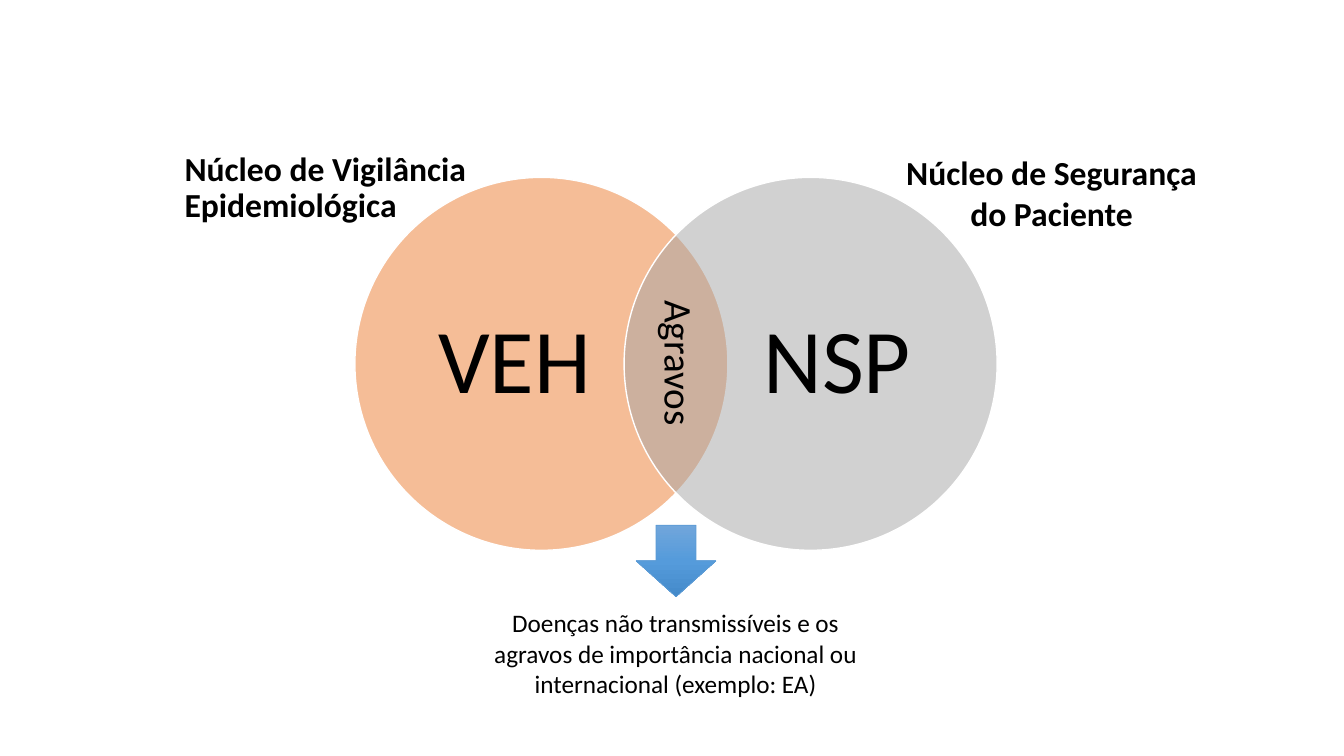
from copy import deepcopy
from dataclasses import dataclass

from pptx import Presentation
from pptx import util as u
from pptx.dml.color import RGBColor
from pptx.enum import shapes, text
from pptx.oxml.ns import qn
from lxml import etree

BLACK, WHITE = "000000", "FFFFFF"
DIAMETER, CIRCLE_TOP = 3.7, 1.76


@dataclass
class Circle:
    label: str
    left: float
    label_left: float
    color: str


@dataclass
class Label:
    words: str
    box: tuple[float, float, float, float]
    size: int
    bold: bool = False
    align: text.PP_ALIGN = text.PP_ALIGN.CENTER
    anchor: text.MSO_ANCHOR = text.MSO_ANCHOR.TOP
    spacing: float = 1.0
    rotation: int = 0
    flush: bool = False


TITLE = Label("Núcleo de Vigilância Epidemiológica", (1.73, 1.46, 3.24, 0.69), 24,
              bold=True, align=text.PP_ALIGN.LEFT, spacing=0.9)
CIRCLES = [
    Circle("VEH", 3.52, 4.04, "ED7D31"),
    Circle("NSP", 6.19, 7.24, "A5A5A5"),
]
LABELS = [
    Label("Núcleo de Segurança do Paciente", (8.81, 1.46, 3.24, 0.69), 24, bold=True),
    Label("Agravos", (5.92, 3.42, 1.65, 0.57), 28, align=text.PP_ALIGN.LEFT, rotation=90),
    Label("Doenças não transmissíveis e os agravos de importância nacional ou "
          "internacional (exemplo: EA)", (4.59, 5.98, 4.22, 1.01), 18),
]
ARROW_STOPS = [(0, "71A6DB"), (0.5, "559BDB"), (1, "448ACA")]


def rgb(color: str) -> RGBColor:
    return RGBColor.from_string(color)


def inches(*lengths: float) -> list[int]:
    return [u.Inches(length) for length in lengths]


def set_all(target, values: dict) -> None:
    for name, value in values.items():
        setattr(target, name, value)


def write(sp, label: Label) -> None:
    """Place a text shape and format its single paragraph."""
    set_all(sp, dict(zip(("left", "top", "width", "height"), inches(*label.box))))
    sp.rotation = label.rotation
    tf = sp.text_frame
    set_all(tf, {"word_wrap": True, "auto_size": text.MSO_AUTO_SIZE.NONE,
                 "vertical_anchor": label.anchor})
    if label.flush:
        set_all(tf, {f"margin_{side}": 0 for side in ("left", "top", "right", "bottom")})
    p = tf.paragraphs[0]
    set_all(p, {"alignment": label.align, "line_spacing": label.spacing})
    r = p.add_run()
    r.text = label.words
    set_all(r.font, {"name": "Calibri", "size": u.Pt(label.size), "bold": label.bold})
    r.font.color.rgb = rgb(BLACK)


def add_label(parent, label: Label) -> None:
    write(parent.add_textbox(*inches(*label.box)), label)


def add_outlined(parent, kind, box: tuple, line: str, width: float):
    sp = parent.add_shape(kind, *inches(*box))
    sp.shadow.inherit = False
    sp.line.color.rgb = rgb(line)
    sp.line.width = u.Pt(width)
    return sp


def add_circle(parent, circle: Circle) -> None:
    """Draw a half-transparent circle with its caption."""
    sp = add_outlined(parent, shapes.MSO_SHAPE.OVAL,
                      (circle.left, CIRCLE_TOP, DIAMETER, DIAMETER), WHITE, 1)
    sp.fill.solid()
    sp.fill.fore_color.rgb = rgb(circle.color)
    fill_color = sp._element.spPr.find(qn("a:solidFill")).find(qn("a:srgbClr"))
    etree.SubElement(fill_color, qn("a:alpha")).set("val", "50000")
    add_label(parent, Label(circle.label, (circle.label_left, 2.2, 2.13, 2.83), 65,
                            anchor=text.MSO_ANCHOR.MIDDLE, spacing=0.9, flush=True))


def add_arrow(parent) -> None:
    """Draw the down arrow with its three-stop gradient."""
    sp = add_outlined(parent, shapes.MSO_SHAPE.DOWN_ARROW,
                      (6.31, 5.21, 0.79, 0.71), "5B9BD5", 0.5)
    sp.fill.gradient()
    sp.fill.gradient_angle = 270
    stop_list = next(sp._element.spPr.iter(qn("a:gsLst")))
    stop_list.append(deepcopy(stop_list[0]))
    for stop, (position, color) in zip(sp.fill.gradient_stops, ARROW_STOPS):
        stop.position = position
        stop.color.rgb = rgb(color)


def main() -> None:
    prs = Presentation()
    prs.slide_width, prs.slide_height = inches(13.33, 7.5)
    s = prs.slides.add_slide(prs.slide_layouts[5])

    # Headings
    write(s.shapes.title, TITLE)
    heading, *notes = LABELS
    add_label(s.shapes, heading)

    # Arrow and overlapping circles
    add_arrow(s.shapes)
    venn = s.shapes.add_group_shape()
    for circle in CIRCLES:
        add_circle(venn.shapes, circle)

    # Overlap name and explanation
    for label in notes:
        add_label(s.shapes, label)

    prs.save("out.pptx")


if __name__ == "__main__":
    main()
